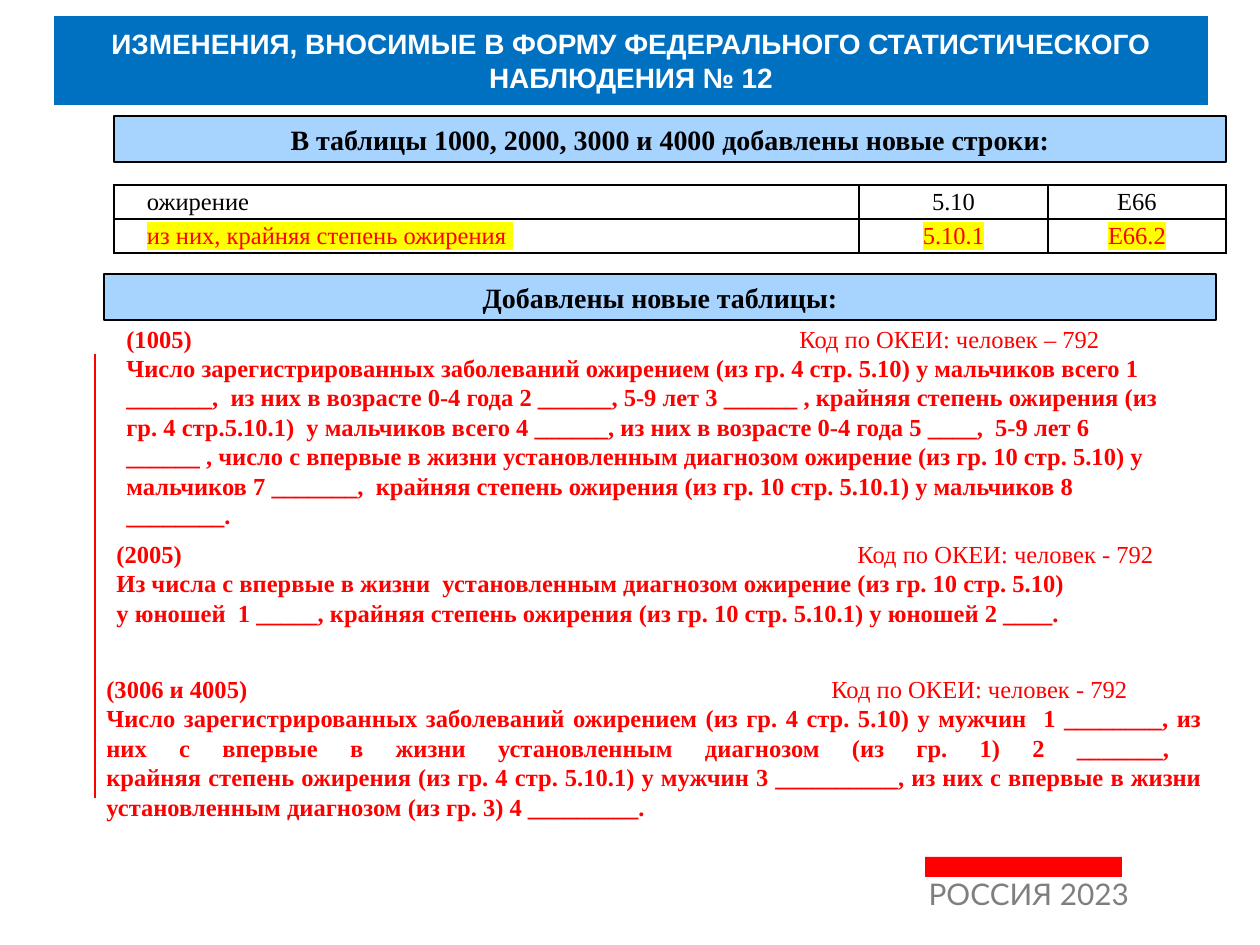
import dataclasses

import lxml.etree
import pptx
import pptx.dml.color
import pptx.enum.shapes
import pptx.enum.text
import pptx.oxml.ns
import pptx.util

ALIGN = pptx.enum.text.PP_ALIGN
ANCHOR = pptx.enum.text.MSO_ANCHOR
EMU_PER_PX = 914400 / 126


@dataclasses.dataclass(frozen=True)
class Theme:
    white: str = "FFFFFF"
    black: str = "000000"
    red: str = "FF0000"
    banner: str = "0070C0"
    heading: str = "A7D3FF"
    marker: str = "FFFF00"
    grey: str = "7F7F7F"
    title_font: str = "Arial"
    text_font: str = "Times New Roman"
    footer_font: str = "Lato"
    heading_size: int = 16
    text_size: int = 14
    footer_size: int = 17
    line_width: float = 0.75
    border_width: int = 1


def px(length):
    return pptx.util.Emu(round(length * EMU_PER_PX))


def rgb(value):
    return pptx.dml.color.RGBColor.from_string(value)


def add_xml(parent, tag, **attributes):
    return lxml.etree.SubElement(parent, pptx.oxml.ns.qn(tag), **attributes)


class SlideBuilder:
    def __init__(self, slide, theme):
        self.slide = slide
        self.theme = theme

    def place(self, shape, box):
        shape.left, shape.top, shape.width, shape.height = map(px, box)

    def format(self, paragraph, font, size, color, bold=False, align=ALIGN.LEFT):
        paragraph.alignment = align
        paragraph.font.name = font
        paragraph.font.size = pptx.util.Pt(size)
        paragraph.font.bold = bold
        paragraph.font.color.rgb = rgb(color)

    def title(self, box, text):
        banner = self.slide.shapes.title
        self.place(banner, box)
        banner.fill.solid()
        banner.fill.fore_color.rgb = rgb(self.theme.banner)
        banner.text_frame.text = text
        banner.text_frame.vertical_anchor = ANCHOR.MIDDLE
        self.format(banner.text_frame.paragraphs[0], self.theme.title_font,
                    self.theme.heading_size, self.theme.white, True, ALIGN.CENTER)

    def footer(self, box, text):
        footer = self.slide.placeholders[1]
        self.place(footer, box)
        footer.text_frame.text = text
        paragraph = footer.text_frame.paragraphs[0]
        paragraph.line_spacing = 0.8
        self.format(paragraph, self.theme.footer_font,
                    self.theme.footer_size, self.theme.grey)

    def bar(self, box, color):
        bar = self.slide.shapes.add_shape(
            pptx.enum.shapes.MSO_SHAPE.RECTANGLE, *map(px, box))
        bar.shadow.inherit = False
        bar.fill.solid()
        bar.fill.fore_color.rgb = rgb(color)
        bar.line.fill.background()
        return bar

    def heading(self, box, text):
        heading = self.bar(box, self.theme.heading)
        heading.line.color.rgb = rgb(self.theme.black)
        heading.line.width = pptx.util.Pt(self.theme.line_width)
        heading.text_frame.text = text
        heading.text_frame.word_wrap = True
        heading.text_frame.vertical_anchor = ANCHOR.MIDDLE
        self.format(heading.text_frame.paragraphs[0], self.theme.text_font,
                    self.theme.heading_size, self.theme.black, True, ALIGN.CENTER)

    def rule(self, x, top, bottom):
        rule = self.slide.shapes.add_connector(
            pptx.enum.shapes.MSO_CONNECTOR.STRAIGHT, px(x), px(top), px(x), px(bottom))
        rule.line.color.rgb = rgb(self.theme.red)
        rule.line.width = pptx.util.Pt(self.theme.line_width)
        add_xml(rule._element.spPr, "a:effectLst")

    def border(self, cell):
        properties = cell._tc.get_or_add_tcPr()
        width = str(pptx.util.Pt(self.theme.border_width))
        for position, side in enumerate(("a:lnL", "a:lnR", "a:lnT", "a:lnB")):
            edge = add_xml(properties, side, w=width)
            add_xml(add_xml(edge, "a:solidFill"), "a:srgbClr", val=self.theme.black)
            properties.insert(position, edge)

    def highlight(self, run):
        mark = add_xml(run.font._element, "a:highlight")
        add_xml(mark, "a:srgbClr", val=self.theme.marker)

    def table(self, left, top, widths, row_height, rows, new_rows):
        table = self.slide.shapes.add_table(
            len(rows), len(widths), px(left), px(top),
            px(sum(widths)), px(row_height * len(rows))).table
        table.first_row = table.horz_banding = False
        for column, width in zip(table.columns, widths):
            column.width = px(width)
        for row_index, values in enumerate(rows):
            table.rows[row_index].height = px(row_height)
            is_new = row_index in new_rows
            for column_index, value in enumerate(values):
                cell = table.cell(row_index, column_index)
                cell.fill.solid()
                cell.fill.fore_color.rgb = rgb(self.theme.white)
                self.border(cell)
                cell.vertical_anchor = ANCHOR.MIDDLE
                cell.margin_left = px(9 if column_index else 33)
                cell.margin_right = px(9)
                cell.margin_top = cell.margin_bottom = 0
                cell.text = value
                paragraph = cell.text_frame.paragraphs[0]
                self.format(paragraph, self.theme.text_font, self.theme.text_size,
                            self.theme.red if is_new else self.theme.black,
                            align=ALIGN.CENTER if column_index else ALIGN.LEFT)
                if is_new:
                    self.highlight(paragraph.runs[0])

    def form(self, box, number, unit, unit_tab, body, align):
        frame = self.slide.shapes.add_textbox(*map(px, box)).text_frame
        frame.word_wrap = True
        frame.vertical_anchor = ANCHOR.MIDDLE
        caption = frame.paragraphs[0]
        self.format(caption, self.theme.text_font, self.theme.text_size, self.theme.red)
        tabs = lxml.etree.Element(pptx.oxml.ns.qn("a:tabLst"))
        add_xml(tabs, "a:tab", pos=str(px(unit_tab)), algn="l")
        caption.font._element.addprevious(tabs)
        for text, bold in ((number + "\t", True), (unit, False)):
            run = caption.add_run()
            run.text = text
            run.font.bold = bold
        for text in body:
            paragraph = frame.add_paragraph()
            paragraph.text = text
            self.format(paragraph, self.theme.text_font, self.theme.text_size,
                        self.theme.red, True, align)


def main():
    deck = pptx.Presentation()
    deck.slide_width, deck.slide_height = px(1260), px(945)
    theme = Theme()
    page = SlideBuilder(deck.slides.add_slide(deck.slide_layouts[0]), theme)

    page.title((54, 16, 1154, 89),
               "ИЗМЕНЕНИЯ, ВНОСИМЫЕ В ФОРМУ ФЕДЕРАЛЬНОГО СТАТИСТИЧЕСКОГО НАБЛЮДЕНИЯ № 12")
    page.footer((916, 876, 237, 59), "РОССИЯ 2023")
    page.bar((925, 857, 197, 20), theme.red)
    page.rule(95, 354, 798)
    page.heading((114, 116, 1112, 46),
                 "В таблицы 1000, 2000, 3000 и 4000 добавлены новые строки:")
    page.table(114, 185, (745, 189, 178), 34,
               (("ожирение", "5.10", "E66"),
                ("из них, крайняя степень ожирения ", "5.10.1", "E66.2")), {1})
    page.heading((104, 274, 1112, 46), "Добавлены новые таблицы:")

    page.form((114, 317, 1081, 219), "(1005)", "Код по ОКЕИ: человек – 792", 673, (
        "Число зарегистрированных заболеваний ожирением (из гр. 4 стр. 5.10) у мальчиков всего 1 _______,  "
        "из них в возрасте 0-4 года 2 ______, 5-9 лет 3 ______ , крайняя степень ожирения "
        "(из гр. 4 стр.5.10.1)  у мальчиков всего 4 ______, из них в возрасте 0-4 года 5 ____,  "
        "5-9 лет 6 ______ , число с впервые в жизни установленным диагнозом ожирение "
        "(из гр. 10 стр. 5.10) у мальчиков 7 _______,  крайняя степень ожирения "
        "(из гр. 10 стр. 5.10.1) у мальчиков 8 ________.",), ALIGN.LEFT)
    page.form((104, 532, 1101, 102), "(2005)", "Код по ОКЕИ: человек - 792", 741, (
        "Из числа с впервые в жизни  установленным диагнозом ожирение (из гр. 10 стр. 5.10) ",
        "у юношей  1 _____, крайняя степень ожирения (из гр. 10 стр. 5.10.1) у юношей 2 ____."),
        ALIGN.JUSTIFY)
    page.form((94, 667, 1121, 161), "(3006 и 4005)", "Код по ОКЕИ: человек - 792", 725, (
        "Число зарегистрированных заболеваний ожирением (из гр. 4 стр. 5.10) у мужчин  1 ________, "
        "из них с впервые в жизни установленным диагнозом (из гр. 1) 2 _______, \v"
        "крайняя степень ожирения (из гр. 4 стр. 5.10.1) у мужчин 3 __________, "
        "из них с впервые в жизни установленным диагнозом (из гр. 3) 4 _________.",), ALIGN.JUSTIFY)

    deck.save("out.pptx")


if __name__ == "__main__":
    main()
